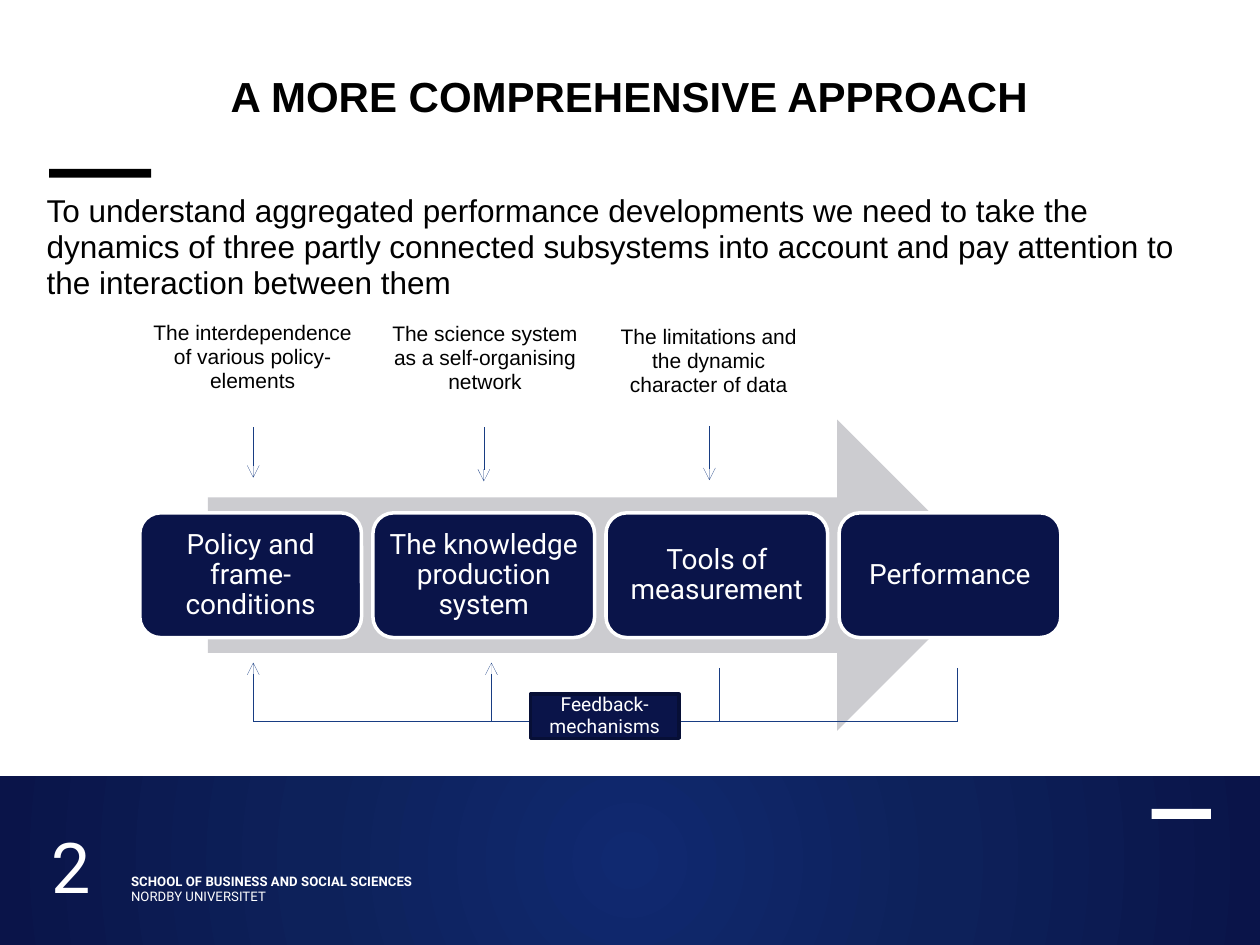
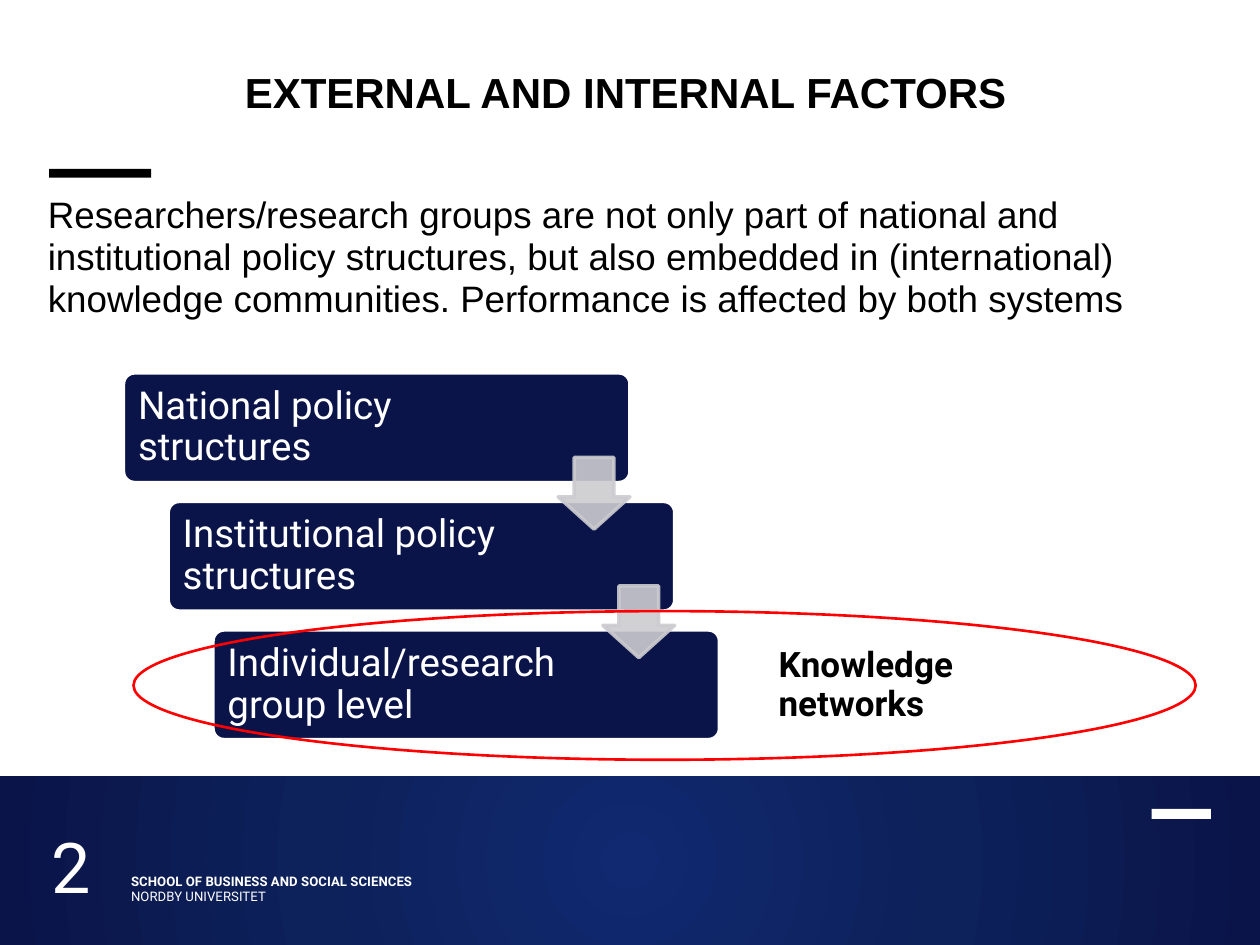
from dataclasses import dataclass

from lxml import etree
from pptx import Presentation
from pptx.dml.color import RGBColor
from pptx.enum.shapes import MSO_CONNECTOR, MSO_SHAPE
from pptx.enum.text import MSO_ANCHOR, PP_ALIGN
from pptx.oxml.ns import qn
from pptx.util import Inches, Pt

RECTANGLE = MSO_SHAPE.RECTANGLE
ROUNDED = MSO_SHAPE.ROUNDED_RECTANGLE
RIGHT_ARROW = MSO_SHAPE.RIGHT_ARROW
DOWN_ARROW = MSO_SHAPE.DOWN_ARROW
OVAL = MSO_SHAPE.OVAL
STRAIGHT = MSO_CONNECTOR.STRAIGHT
TOP, MIDDLE, BOTTOM = MSO_ANCHOR.TOP, MSO_ANCHOR.MIDDLE, MSO_ANCHOR.BOTTOM
LEFT, CENTER = PP_ALIGN.LEFT, PP_ALIGN.CENTER

SLIDE_WIDTH, SLIDE_HEIGHT = Inches(10), Inches(7.5)
COLUMNS, ROWS = 100, 75


@dataclass(frozen=True)
class Theme:
    navy: str = "0A1449"
    navy_edge: str = "070F36"
    connector: str = "183D83"
    grey: str = "CCCCD0"
    white: str = "FFFFFF"
    black: str = "000000"
    red: str = "FF0000"
    band: tuple = ((0, "102970"), (50, "0D215A"), (100, "0A1449"))
    heading_font: str = "Arial"
    label_font: str = "Roboto"
    title_size: float = 24
    number_size: float = 40
    footer_size: float = 7.5
    callout_size: float = 12
    step_size: float = 16
    level_size: float = 22
    network_size: float = 20
    feedback_size: float = 11
    outline: float = 2
    hairline: float = 0.14


THEME = Theme()


def across(columns):
    return round(SLIDE_WIDTH * columns / COLUMNS)


def down(rows):
    return round(SLIDE_HEIGHT * rows / ROWS)


def place(area):
    left, top, width, height = area
    return across(left), down(top), across(width), down(height)


def apply_format(target, values):
    for name, value in values.items():
        setattr(target, name, value)


def write(box, lines, size, font, color=THEME.white, bold=(False,), align=LEFT,
          anchor=TOP, insets=(0, 0, 0, 0), spacing=0.95, before=0):
    left, top, right, bottom = insets
    frame = box.text_frame
    apply_format(frame, {
        "word_wrap": True, "vertical_anchor": anchor,
        "margin_left": across(left), "margin_top": down(top),
        "margin_right": across(right), "margin_bottom": down(bottom),
    })
    para = frame.paragraphs[0]
    apply_format(para, {"alignment": align, "line_spacing": spacing,
                        "space_before": Pt(before)})
    for index, line in enumerate(lines):
        if index:
            para.add_line_break()
        span = para.add_run()
        span.text = line
        apply_format(span.font, {"name": font, "size": Pt(size), "bold": bold[index]})
        span.font.color.rgb = RGBColor.from_string(color)


def add_text(page, area, text, size, font, **format_values):
    box = page.shapes.add_textbox(*place(area))
    lines = [text] if isinstance(text, str) else text
    write(box, lines, size, font, **format_values)


def set_alpha(fill, percent):
    for color in fill.iter(qn("a:srgbClr")):
        etree.SubElement(color, qn("a:alpha")).set("val", str(percent * 1000))


def add_block(page, kind, area, fill=None, line=None, width=THEME.outline,
              adjustments=(), alpha=None):
    block = page.shapes.add_shape(kind, *place(area))
    block.shadow.inherit = False
    for index, value in enumerate(adjustments):
        block.adjustments[index] = value
    if fill:
        block.fill.solid()
        block.fill.fore_color.rgb = RGBColor.from_string(fill)
    else:
        block.fill.background()
    if line:
        block.line.color.rgb = RGBColor.from_string(line)
        block.line.width = Pt(width)
    else:
        block.line.fill.background()
    if alpha:
        set_alpha(block._element.spPr, alpha)
    return block


def add_line(page, start, end, arrow=False):
    line = page.shapes.add_connector(STRAIGHT, across(start[0]), down(start[1]),
                                     across(end[0]), down(end[1]))
    line.line.color.rgb = RGBColor.from_string(THEME.connector)
    line.line.width = Pt(THEME.hairline)
    properties = line._element.spPr
    if arrow:
        etree.SubElement(properties.find(qn("a:ln")), qn("a:tailEnd"), type="arrow")
    etree.SubElement(properties, qn("a:effectLst"))


def add_footer_band(page):
    band = add_block(page, RECTANGLE, (0, 61.6, 100, 13.4), THEME.navy)
    solid = band._element.spPr.find(qn("a:solidFill"))
    gradient = etree.Element(qn("a:gradFill"), rotWithShape="1")
    stops = etree.SubElement(gradient, qn("a:gsLst"))
    for position, color in THEME.band:
        stop = etree.SubElement(stops, qn("a:gs"), pos=str(position * 1000))
        etree.SubElement(stop, qn("a:srgbClr"), val=color)
    circle = etree.SubElement(gradient, qn("a:path"), attrib={"path": "circle"})
    etree.SubElement(circle, qn("a:fillToRect"),
                     attrib=dict.fromkeys("ltrb", "50000"))
    solid.getparent().replace(solid, gradient)


def add_page(deck, title, title_area, body, body_area, body_size):
    page = deck.slides.add_slide(deck.slide_layouts[6])
    add_footer_band(page)
    add_block(page, RECTANGLE, (91.4, 64.2, 4.7, 0.8), THEME.white)
    add_text(page, (10.4, 63, 39.4, 9),
             ["SCHOOL OF BUSINESS AND SOCIAL SCIENCES", "NORDBY UNIVERSITET"],
             THEME.footer_size, THEME.label_font, bold=(True, False),
             anchor=BOTTOM, insets=(0, 0, 0, 0.2), spacing=Pt(9.1))
    add_text(page, (4.1, 63, 5.5, 9), "2", THEME.number_size, THEME.label_font,
             anchor=BOTTOM, spacing=1.0)
    add_block(page, RECTANGLE, (3.9, 13.4, 8.1, 0.7), THEME.black)
    add_text(page, title_area, title, THEME.title_size, THEME.heading_font,
             color=THEME.black, bold=(True,), align=CENTER, anchor=BOTTOM, spacing=0.83)
    add_text(page, body_area, body, body_size, THEME.heading_font,
             color=THEME.black, before=6)
    return page


def add_steps(page, labels):
    add_block(page, RIGHT_ARROW, (16.5, 33.3, 62.3, 24.7), THEME.grey)
    for index, label in enumerate(labels):
        step = add_block(page, ROUNDED, (11.1 + 18.5 * index, 40.7, 17.6, 9.9),
                         THEME.navy, THEME.white)
        write(step, [label], THEME.step_size, THEME.label_font, align=CENTER,
              anchor=MIDDLE, insets=(0.6,) * 4, spacing=0.9)


def add_callout(page, text, area, arrow_column, arrow_top, arrow_tip):
    add_text(page, area, text, THEME.callout_size, THEME.heading_font,
             color=THEME.black, align=CENTER)
    add_line(page, (arrow_column, arrow_top), (arrow_column, arrow_tip), arrow=True)


def add_feedback(page, label):
    base = 57.2
    for column in (20.1, 39):
        add_line(page, (column, base), (column, 52.6), arrow=True)
    for column in (57.1, 76):
        add_line(page, (column, 53), (column, base))
    add_line(page, (20.1, base), (76, base))
    box = add_block(page, RECTANGLE, (42.1, 55.1, 11.8, 3.5), THEME.navy, THEME.navy_edge)
    write(box, [label], THEME.feedback_size, THEME.label_font, align=CENTER)


def add_levels(page, labels):
    left, top, width, height = 9.8, 29.6, 40.2, 8.7
    shift, drop, arrow = 3.55, 10.2, 5.7
    for index, label in enumerate(labels):
        level = add_block(page, ROUNDED,
                          (left + shift * index, top + drop * index, width, height),
                          THEME.navy, THEME.white, adjustments=(0.1,))
        write(level, [label], THEME.level_size, THEME.label_font, anchor=MIDDLE,
              insets=(0.9, 0.9, 10, 0.9), spacing=0.9)
    for index in range(len(labels) - 1):
        add_block(page, DOWN_ARROW,
                  (left + width - arrow + shift * index, 36.3 + drop * index, arrow, arrow),
                  THEME.grey, THEME.grey, adjustments=(0.55, 0.45), alpha=90)


def build_approach(deck):
    page = add_page(
        deck, "A MORE COMPREHENSIVE APPROACH", (3.8, 2.9, 92.3, 6.7),
        "To understand aggregated performance developments we need to take the dynamics "
        "of three partly connected subsystems into account and pay attention to the "
        "interaction between them", (3.7, 15.4, 92.4, 45.3), 18)
    add_steps(page, ["Policy and frame-conditions", "The knowledge production system",
                     "Tools of measurement", "Performance"])
    callouts = [
        ("The interdependence of various policy-elements",
         (11.8, 25.5, 16.5, 5.8), 20.1, 33.9, 37.9),
        ("The science system as a self-organising network",
         (31, 25.6, 15, 5.8), 38.4, 33.9, 38.2),
        ("The limitations and the dynamic character of data",
         (48.4, 25.8, 15.7, 5.8), 56.3, 33.8, 38.1),
    ]
    for callout in callouts:
        add_callout(page, *callout)
    add_feedback(page, "Feedback-mechanisms")


def build_factors(deck):
    page = add_page(
        deck, "EXTERNAL AND INTERNAL FACTORS", (3.5, 3.6, 92.3, 5.7),
        "Researchers/research groups are not only part of national and institutional "
        "policy structures, but also embedded in (international) knowledge communities. "
        "Performance is affected by both systems", (3.8, 15.5, 92.4, 44.3), 21)
    add_levels(page, ["National policy structures", "Institutional policy structures",
                      "Individual/research group level"])
    add_block(page, OVAL, (10.6, 48.5, 84.3, 11.8), line=THEME.red, width=1.5)
    add_text(page, (61.8, 51.2, 24.4, 6.4), "Knowledge networks", THEME.network_size,
             THEME.label_font, color=THEME.black, bold=(True,))


def main():
    deck = Presentation()
    apply_format(deck, {"slide_width": SLIDE_WIDTH, "slide_height": SLIDE_HEIGHT})
    build_approach(deck)
    build_factors(deck)
    deck.save("out.pptx")


if __name__ == "__main__":
    main()
